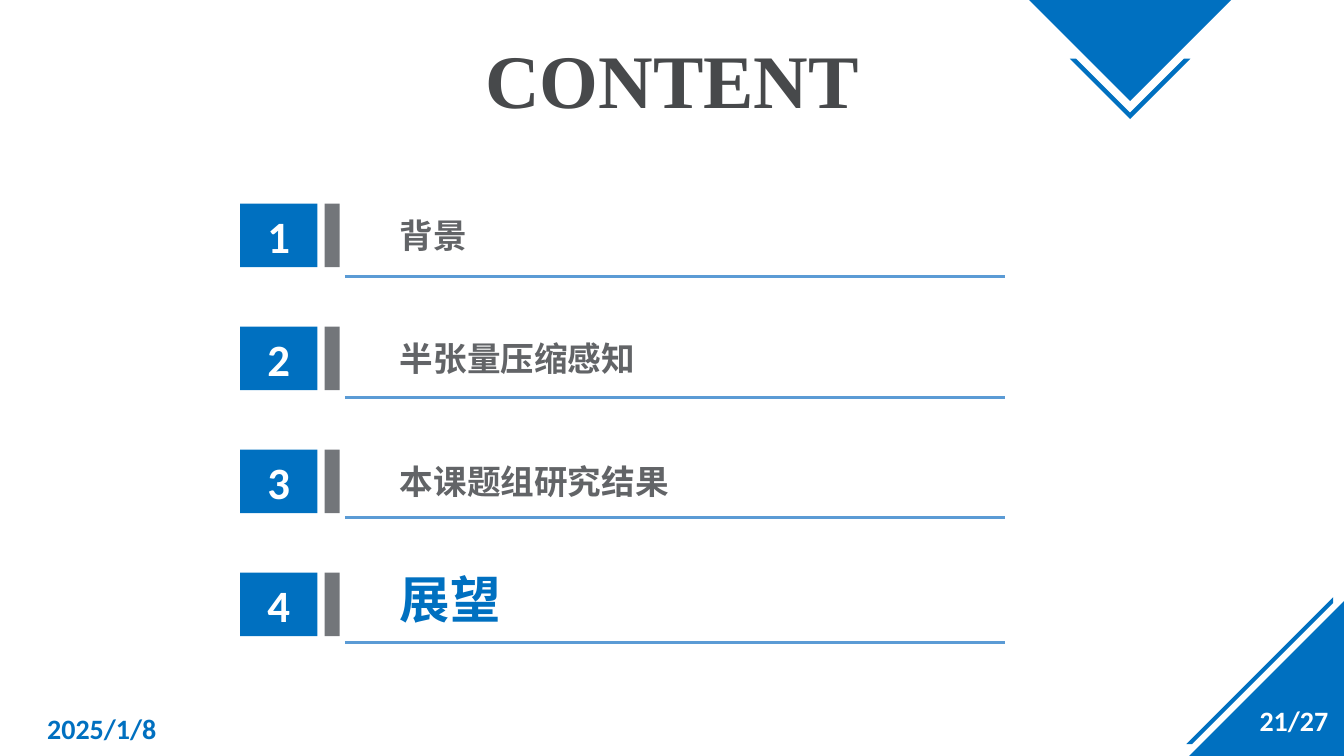
from collections import namedtuple

from lxml.etree import SubElement
from pptx import Presentation
from pptx.dml.color import RGBColor
from pptx.enum.shapes import MSO_CONNECTOR, MSO_SHAPE
from pptx.enum.text import MSO_ANCHOR as Anchor, MSO_AUTO_SIZE as AutoSize, PP_ALIGN as Align
from pptx.oxml.ns import qn
from pptx.util import Cm, Pt

BLUE = RGBColor(0x00, 0x70, 0xC0)
RULE_BLUE = RGBColor(0x5B, 0x9B, 0xD5)
BAR_GRAY = RGBColor(0x73, 0x76, 0x7A)
TEXT_GRAY = RGBColor(0x62, 0x64, 0x67)
TITLE_GRAY = RGBColor(0x47, 0x49, 0x4B)
WHITE = RGBColor(0xFF, 0xFF, 0xFF)

CHINESE_FONT = "Noto Sans CJK SC"
SLIDE_WIDTH, SLIDE_HEIGHT = 33.87, 19.05
ROW_PITCH = 3.1

# All box lengths are in centimetres.
Box = namedtuple("Box", "left top width height")
Topic = namedtuple("Topic", "name size color text_offset rule_offset")

TOPICS = [
    Topic("背景", 24, TEXT_GRAY, 0.15, 1.83),
    Topic("半张量压缩感知", 24, TEXT_GRAY, 0.15, 1.78),
    Topic("本课题组研究结果", 24, TEXT_GRAY, 0.15, 1.7),
    Topic("展望", 36, BLUE, -0.25, 1.75),
]


def in_cm(box):
    return [Cm(length) for length in box]


def write_text(shape, text, size, color, font="Calibri", align=Align.LEFT, anchor=Anchor.TOP):
    frame = shape.text_frame
    frame.word_wrap = True
    frame.auto_size = AutoSize.NONE
    frame.vertical_anchor = anchor
    paragraph = frame.paragraphs[0]
    paragraph.alignment = align
    run = paragraph.add_run()
    run.text = text
    run.font.size = Pt(size)
    run.font.bold = True
    run.font.color.rgb = color
    run.font.name = font
    SubElement(run.font._element, qn("a:ea"), typeface=font)


def add_text(slide, box, text, **text_format):
    write_text(slide.shapes.add_textbox(*in_cm(box)), text, **text_format)


def paint(shape, color):
    shape.shadow.inherit = False
    shape.fill.solid()
    shape.fill.fore_color.rgb = color
    shape.line.fill.background()


def add_block(slide, kind, box, color, rotation=0):
    shape = slide.shapes.add_shape(kind, *in_cm(box))
    paint(shape, color)
    shape.rotation = rotation
    return shape


def add_polygon(slide, points, color):
    start, *others = [(Cm(x), Cm(y)) for x, y in points]
    builder = slide.shapes.build_freeform(*start)
    builder.add_line_segments(others, close=True)
    paint(builder.convert_to_shape(), color)


def add_rule(slide, left, top, width):
    rule = slide.shapes.add_connector(
        MSO_CONNECTOR.STRAIGHT, Cm(left), Cm(top), Cm(left + width), Cm(top))
    rule.line.color.rgb = RULE_BLUE
    rule.line.width = Pt(2.25)
    SubElement(rule._element.spPr, qn("a:effectLst"))


def add_top_ornament(slide, box):
    """Turn a square triangle so that it points down, with a chevron below it."""
    add_block(slide, MSO_SHAPE.RIGHT_TRIANGLE, box, BLUE, rotation=315)
    middle = box.left + box.width / 2
    tip = box.top + box.height / 2 + 3
    reach, thickness = 1.52, 0.16
    add_polygon(slide, [
        (middle - reach, tip - reach),
        (middle - reach + thickness, tip - reach),
        (middle, tip - thickness),
        (middle + reach - thickness, tip - reach),
        (middle + reach, tip - reach),
        (middle, tip),
    ], BLUE)


def add_corner_ornament(slide, box):
    """Fill the lower right half of the box and run a strip along its diagonal."""
    add_block(slide, MSO_SHAPE.RIGHT_TRIANGLE, box, BLUE, rotation=270)
    left, bottom = box.left - 0.07, box.top + box.height - 0.3
    reach, thickness = 3.7, 0.14
    add_polygon(slide, [
        (left, bottom),
        (left + reach, bottom - reach),
        (left + reach, bottom - reach + thickness),
        (left + thickness, bottom),
    ], BLUE)


def add_title(slide, box):
    title = slide.shapes.title
    title.left, title.top, title.width, title.height = in_cm(box)
    write_text(title, "CONTENT", size=54, color=TITLE_GRAY,
               font="Times New Roman", align=Align.CENTER)


def add_topic(slide, box, number, topic):
    badge = add_block(slide, MSO_SHAPE.RECTANGLE, box._replace(width=1.95), BLUE)
    write_text(badge, str(number), size=32, color=WHITE,
               align=Align.CENTER, anchor=Anchor.MIDDLE)
    add_block(slide, MSO_SHAPE.RECTANGLE,
              box._replace(left=box.left + 2.13, width=0.38), BAR_GRAY)
    text_box = Box(box.left + 3.78, box.top + topic.text_offset, 15.5, topic.size * 0.05)
    add_text(slide, text_box, topic.name, size=topic.size, color=topic.color, font=CHINESE_FONT)
    add_rule(slide, box.left + 2.64, box.top + topic.rule_offset, box.width - 2.64)


def add_topics(slide, box):
    for index, topic in enumerate(TOPICS):
        row = Box(box.left, box.top + index * ROW_PITCH, box.width, 1.6)
        add_topic(slide, row, index + 1, topic)


def add_footer(slide, box):
    add_text(slide, box._replace(top=box.top + 0.18, width=7.62), "2025/1/8",
             size=20, color=BLUE, anchor=Anchor.MIDDLE)
    number_width = 2.57
    number_box = box._replace(left=box.left + box.width - number_width, width=number_width)
    add_text(slide, number_box, "21/27", size=20, color=WHITE,
             align=Align.RIGHT, anchor=Anchor.MIDDLE)


def build_content_slide(presentation):
    slide = presentation.slides.add_slide(presentation.slide_layouts[5])
    add_corner_ornament(slide, Box(SLIDE_WIDTH - 3.9, SLIDE_HEIGHT - 3.9, 3.9, 3.9))
    add_top_ornament(slide, Box(26.68, -1.8, 3.6, 3.6))
    add_title(slide, Box(11.1, 0.69, 11.68, 2.57))
    add_topics(slide, Box(6.05, 5.13, 19.27, 4 * ROW_PITCH))
    add_footer(slide, Box(0.94, 17.65, 32.79, 1.02))


def main():
    presentation = Presentation()
    presentation.slide_width = Cm(SLIDE_WIDTH)
    presentation.slide_height = Cm(SLIDE_HEIGHT)
    build_content_slide(presentation)
    presentation.save("out.pptx")


if __name__ == "__main__":
    main()
